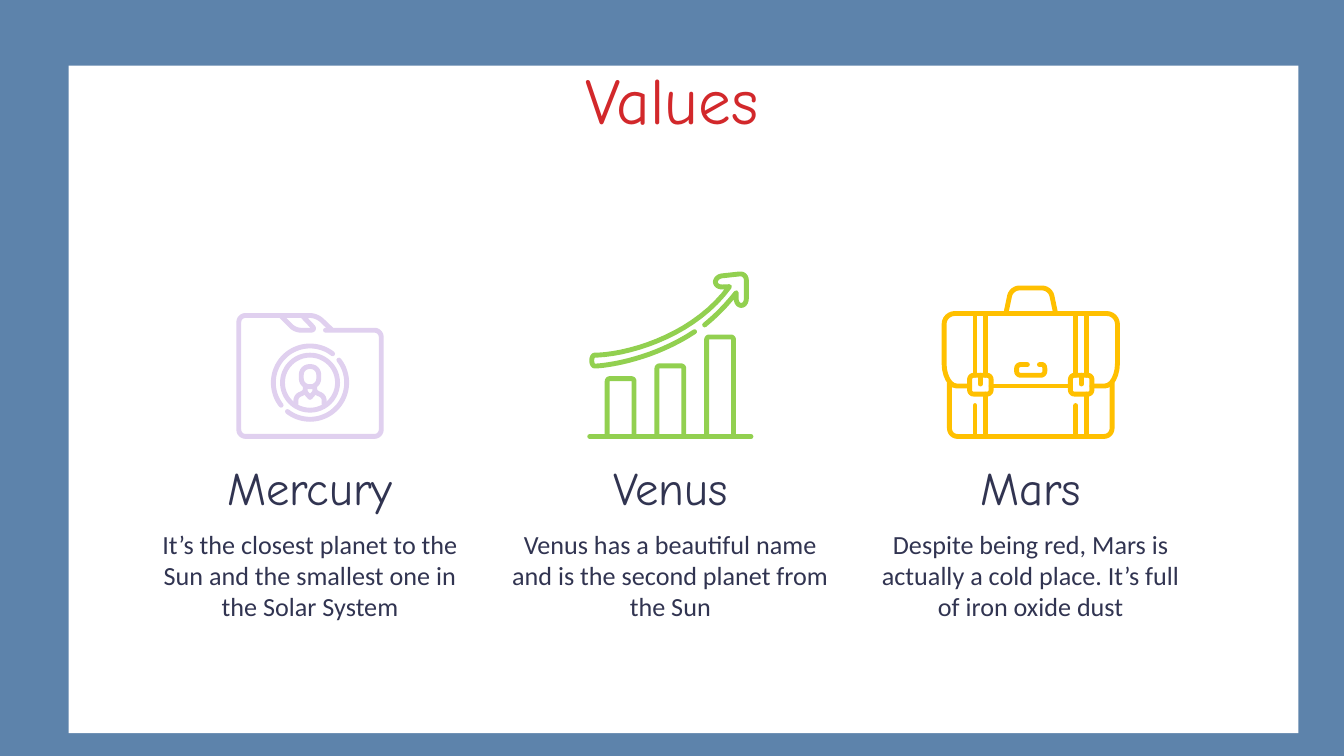
import math

from pptx import Presentation
from pptx.dml.color import RGBColor
from pptx.enum.shapes import MSO_SHAPE
from pptx.enum.text import MSO_ANCHOR, MSO_AUTO_SIZE, PP_ALIGN
from pptx.util import Cm, Pt

RECTANGLE = MSO_SHAPE.RECTANGLE
TOP = MSO_ANCHOR.TOP
NO_AUTOFIT = MSO_AUTO_SIZE.NONE
CENTER = PP_ALIGN.CENTER

BLUE = RGBColor(0x5D, 0x83, 0xAB)
WHITE = RGBColor(0xFF, 0xFF, 0xFF)
RED = RGBColor(0xD2, 0x28, 0x2B)
NAVY = RGBColor(0x31, 0x34, 0x51)
LILAC = RGBColor(0xE0, 0xD0, 0xEF)
GREEN = RGBColor(0x92, 0xD0, 0x50)
AMBER = RGBColor(0xFF, 0xC0, 0x00)

HEADING_FONT = "Comic Neue"
BODY_FONT = "Calibri"

COLUMN_LEFT, COLUMN_STEP, COLUMN_WIDTH = Cm(2.62), Cm(6.81), Cm(6.48)
ICON_BASE = Cm(8.25)
ICON_LINE = Pt(2.6)
# Icon points are hundredths of an inch from the middle of the base line
PRECISION = 100
ICON_SCALE = Cm(2.54) / 100 / PRECISION


def bezier(start, control_1, control_2, end, steps=16):
    """Return points along a cubic curve."""
    points = []
    for step in range(steps + 1):
        t = step / steps
        weights = ((1 - t) ** 3, 3 * t * (1 - t) ** 2, 3 * t * t * (1 - t), t ** 3)
        corners = (start, control_1, control_2, end)
        points.append(tuple(sum(w * c[axis] for w, c in zip(weights, corners))
                            for axis in (0, 1)))
    return points


def arc(x, y, radius, first, last, steps=48):
    """Return points along an arc, with angles in degrees clockwise."""
    angles = [math.radians(first + (last - first) * i / steps) for i in range(steps + 1)]
    return [(x + radius * math.cos(a), y + radius * math.sin(a)) for a in angles]


def toward(point, other, distance):
    """Move a point toward another, at most half of the way."""
    share = min(distance / math.dist(point, other), 0.5)
    return tuple(a + (b - a) * share for a, b in zip(point, other))


def rounded(points, radius, closed=False):
    """Round the corners; a third value of a point is its own radius."""
    corners = [point[:2] for point in points]
    result = []
    for i, corner in enumerate(corners):
        if not closed and i in (0, len(corners) - 1):
            result.append(corner)
            continue
        size = points[i][2] if len(points[i]) > 2 else radius
        entry = toward(corner, corners[i - 1], size)
        leave = toward(corner, corners[(i + 1) % len(corners)], size)
        # Controls at 55 % of the way to the corner give a near circle
        controls = [tuple(a + (b - a) * 0.55 for a, b in zip(p, corner))
                    for p in (entry, leave)]
        result += bezier(entry, *controls, leave, steps=6)
    return result + result[:1] if closed else result


def box(left, top, right, bottom, radius):
    return rounded([(left, top), (right, top), (right, bottom), (left, bottom)],
                   radius, closed=True)


def shift(points, distance):
    return [(x + distance, y) for x, y in points]


def add_strokes(slide, center, color, contours):
    """Draw several open or closed lines as one freeform."""
    scaled = [[(x * PRECISION, y * PRECISION) for x, y in c] for c in contours]
    builder = slide.shapes.build_freeform(*scaled[0][0], scale=ICON_SCALE)
    for index, contour in enumerate(scaled):
        if index:
            builder.move_to(*contour[0])
        builder.add_line_segments(contour[1:], close=contour[0] == contour[-1])
    shape = builder.convert_to_shape(center, ICON_BASE)
    shape.shadow.inherit = False
    shape.fill.background()
    shape.line.color.rgb = color
    shape.line.width = ICON_LINE
    shape.line._get_or_add_ln().set("cap", "rnd")
    return shape


def folder_parts():
    folder = [rounded([(11.5, -79), (53, -79), (53, 0), (-53, 0), (-53, -90),
                       (5, -90), (16.5, -79)], 5),
              rounded([(-22, -90), (-11, -79), (4.5, -79), (-5, -89)], 4)]
    person = [arc(0, -40, 20.5, 0, 360),
              box(-6.5, -52, 6.5, -37, 6),
              rounded([(-10.5, -24), (-10.5, -30), (-3.5, -33), (-3.5, -37)], 3),
              rounded([(10.5, -24), (10.5, -30), (3.5, -33), (3.5, -37)], 3),
              [(-3.5, -33), (0, -29), (3.5, -33)]]
    return [folder, person, [arc(0, -40, 27.3, 142, 308)],
            [arc(0, -40, 27.3, -38, 128)]]


def growth_parts():
    bars = [[(-60, 0), (60, 0)]]
    for index, height in enumerate((43, 52.5, 74)):
        left = -47 + 37 * index
        bars.append(rounded([(left, 0), (left, -height), (left + 20, -height),
                             (left + 20, 0)], 2))
    arrow = [bezier((18, -78), (-12, -58), (-45, -53), (-54.5, -52.5))
             + rounded([(-54.5, -52.5), (-58.5, -52.5), (-58.5, -60.5),
                        (-54.5, -60.5)], 4)
             + bezier((-54.5, -60.5), (-25, -62), (20, -78), (44, -111.5))
             + rounded([(44, -111.5), (33.5, -111), (33.5, -119), (56.5, -121.5),
                        (56.5, -97.5), (49, -97.5), (49, -107)], 5)
             + bezier((49, -107), (41, -97), (34, -90), (25.5, -83))]
    return [bars, arrow]


def briefcase_parts():
    case = [rounded([(-45.5, -37.5), (-64.5, -37.5, 17), (-64.5, -91.5),
                     (64.5, -91.5), (64.5, -37.5, 17), (45.5, -37.5)], 8),
            rounded([(-60.5, -40), (-60.5, 0), (60.5, 0), (60.5, -40)], 6),
            rounded([(-18.5, -91.5), (-14.5, -110.5), (14.5, -110.5),
                     (18.5, -91.5)], 6),
            [(-29.5, -37.5), (29.5, -37.5)]]
    strap = [box(-45.5, -45.5, -29.5, -31.5, 3),
             [(-41.5, -91.5), (-41.5, -45.5)],
             [(-33.5, -91.5), (-33.5, -45.5)],
             [(-37.5, -45.5), (-37.5, -39)],
             [(-41.5, -23), (-41.5, 0)],
             [(-33.5, -31.5), (-33.5, 0)]]
    case += strap + [shift(line, 75) for line in strap]
    clasp = [rounded([(-2.5, -53.5), (-10.5, -53.5), (-10.5, -45.5),
                      (10.5, -45.5), (10.5, -53.5), (6.5, -53.5)], 3)]
    return [case, clasp]


def add_icon(slide, center, color, parts):
    slide.shapes.add_group_shape(
        [add_strokes(slide, center, color, contours) for contours in parts])


def write_text(shape, text, *, size, font, color):
    frame = shape.text_frame
    frame.word_wrap = True
    frame.auto_size = NO_AUTOFIT
    frame.vertical_anchor = TOP
    frame.margin_left = frame.margin_right = Cm(0.25)
    frame.margin_top = frame.margin_bottom = Cm(0.25)
    paragraph = frame.paragraphs[0]
    paragraph.alignment = CENTER
    run = paragraph.add_run()
    run.text = text
    run.font.size = Pt(size)
    run.font.name = font
    run.font.color.rgb = color


def add_title(slide, text):
    title = slide.shapes.title
    title.left, title.top, title.width, title.height = Cm(2.21), Cm(0.86), Cm(20.98), Cm(1.57)
    write_text(title, text, size=35, font=HEADING_FONT, color=RED)


def add_panel(slide):
    panel = slide.shapes.add_shape(RECTANGLE, Cm(1.3), Cm(1.24), Cm(23.24), Cm(12.62))
    panel.shadow.inherit = False
    panel.fill.solid()
    panel.fill.fore_color.rgb = WHITE
    panel.line.fill.background()
    # The panel lies behind the title
    slide.shapes.title.element.addprevious(panel.element)


def add_column(slide, left, heading, body):
    heading_box = slide.shapes.add_textbox(left, Cm(8.43), COLUMN_WIDTH, Cm(1.17))
    write_text(heading_box, heading, size=25, font=HEADING_FONT, color=NAVY)
    body_box = slide.shapes.add_textbox(left, Cm(9.73), COLUMN_WIDTH, Cm(2.01))
    write_text(body_box, body, size=14, font=BODY_FONT, color=NAVY)


def main():
    presentation = Presentation()
    presentation.slide_width, presentation.slide_height = Cm(25.4), Cm(14.29)
    slide = presentation.slides.add_slide(presentation.slide_layouts[5])
    slide.background.fill.solid()
    slide.background.fill.fore_color.rgb = BLUE

    # Frame and title
    add_panel(slide)
    add_title(slide, "Values")

    # Three values, each with its icon
    columns = [
        ("Mercury", "It’s the closest planet to the Sun and the smallest one in the Solar System",
         LILAC, folder_parts()),
        ("Venus", "Venus has a beautiful name and is the second planet from the Sun",
         GREEN, growth_parts()),
        ("Mars", "Despite being red, Mars is actually a cold place. It’s full of iron oxide dust",
         AMBER, briefcase_parts()),
    ]
    for index, (heading, body, color, parts) in enumerate(columns):
        left = COLUMN_LEFT + index * COLUMN_STEP
        add_column(slide, left, heading, body)
        add_icon(slide, left + COLUMN_WIDTH // 2, color, parts)

    presentation.save("out.pptx")


if __name__ == "__main__":
    main()
